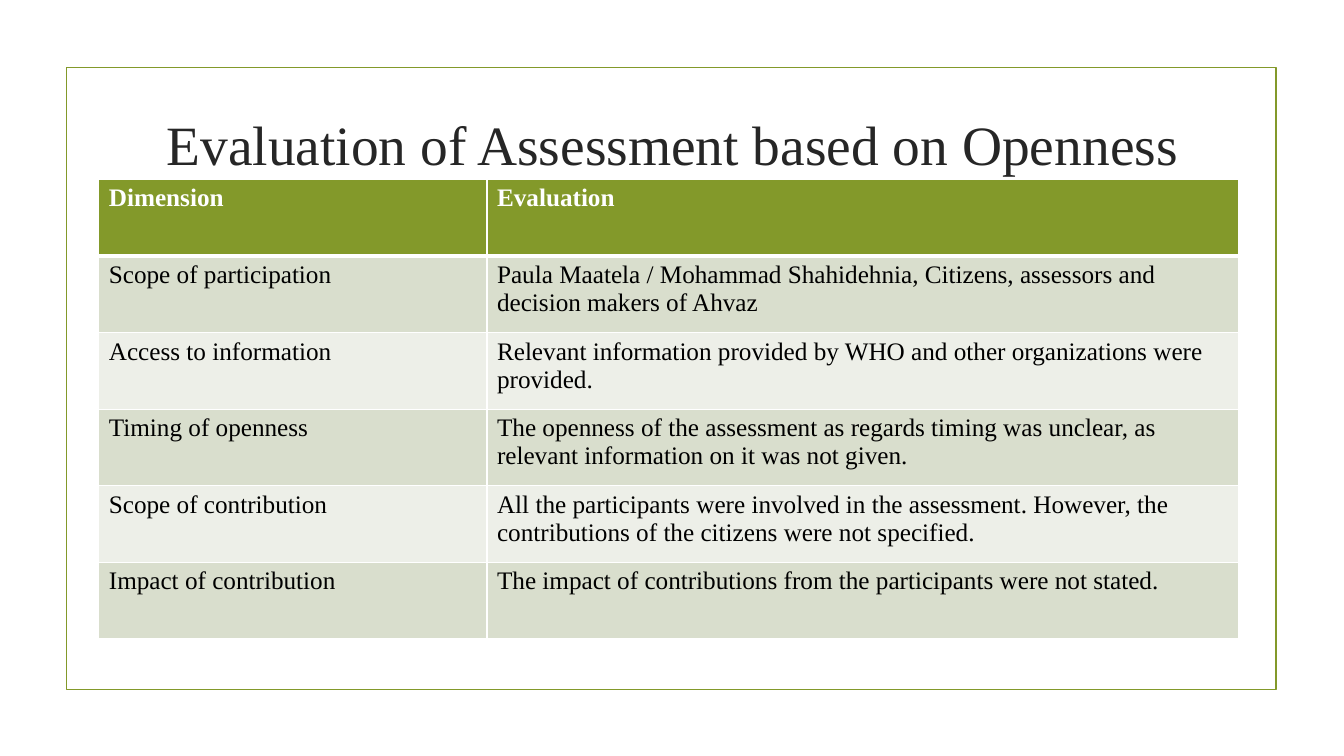
from dataclasses import dataclass

from lxml import etree
from pptx import Presentation
from pptx import util as u
from pptx.dml.color import RGBColor
from pptx.enum import shapes, text
from pptx.oxml import ns


@dataclass(frozen=True)
class Theme:
    """Colours, font and type sizes of the slide."""
    font: str = "Times New Roman"
    green: str = "83992A"
    title_ink: str = "262626"
    body_ink: str = "000000"
    white: str = "FFFFFF"
    bands: tuple = ("D9DECD", "EDEFE8")
    title_size: float = 39.6
    body_size: float = 18
    frame_line: float = 1.25
    grid_line: float = 1
    header_line: float = 3


class SlideBuilder:
    """Draws styled elements on the current slide."""

    def __init__(self, deck, theme):
        """Open a title-only slide."""
        self.theme = theme
        self.slide = deck.slides.add_slide(deck.slide_layouts[5])

    def set_wording(self, text_frame, wording, size, ink, bold=False):
        """Put one formatted paragraph in a text frame."""
        text_frame.text = wording
        font = text_frame.paragraphs[0].font
        formats = {"name": self.theme.font, "size": u.Pt(size), "bold": bold}
        for key, value in formats.items():
            setattr(font, key, value)
        font.color.rgb = RGBColor.from_string(ink)

    def frame(self, left, top, width, height):
        """Draw the outlined border of the slide."""
        border = self.slide.shapes.add_shape(
            shapes.MSO_SHAPE.RECTANGLE, *map(u.Inches, (left, top, width, height)))
        border.shadow.inherit = False
        border.fill.background()
        border.line.color.rgb = RGBColor.from_string(self.theme.green)
        border.line.width = u.Pt(self.theme.frame_line)

    def title(self, wording, left, top, width, height):
        """Place and format the title placeholder."""
        heading = self.slide.shapes.title
        place = {"left": left, "top": top, "width": width, "height": height}
        for key, value in place.items():
            setattr(heading, key, u.Inches(value))
        layout = {"word_wrap": True, "auto_size": text.MSO_AUTO_SIZE.NONE,
                  "vertical_anchor": text.MSO_ANCHOR.MIDDLE}
        for key, value in layout.items():
            setattr(heading.text_frame, key, value)
        self.set_wording(heading.text_frame, wording,
                         self.theme.title_size, self.theme.title_ink)
        heading.text_frame.paragraphs[0].alignment = text.PP_ALIGN.CENTER

    def cell_borders(self, cell, widths):
        """Rule the four sides of a cell in white."""
        properties = cell._tc.get_or_add_tcPr()
        for position, (side, width) in enumerate(widths.items()):
            edge = etree.Element(ns.qn(f"a:ln{side}"), w=str(u.Pt(width)))
            fill = etree.SubElement(edge, ns.qn("a:solidFill"))
            etree.SubElement(fill, ns.qn("a:srgbClr"), val=self.theme.white)
            properties.insert(position, edge)

    def table(self, records, left, top, column_widths, row_height):
        """Add a table with a green header and banded rows."""
        theme = self.theme
        size = (sum(column_widths), row_height * len(records))
        grid = self.slide.shapes.add_table(
            len(records), len(column_widths), *map(u.Inches, (left, top, *size))).table
        for column, width in zip(grid.columns, column_widths):
            column.width = u.Inches(width)
        for row_number, record in enumerate(records):
            grid.rows[row_number].height = u.Inches(row_height)
            header = row_number == 0
            background = theme.green if header else theme.bands[(row_number - 1) % 2]
            widths = dict.fromkeys("LRTB", theme.grid_line)
            if row_number < 2:
                widths["B" if header else "T"] = theme.header_line
            for column_number, wording in enumerate(record):
                cell = grid.cell(row_number, column_number)
                cell.fill.solid()
                cell.fill.fore_color.rgb = RGBColor.from_string(background)
                ink = theme.white if header else theme.body_ink
                self.set_wording(cell.text_frame, wording, theme.body_size, ink, header)
                self.cell_borders(cell, widths)


EVALUATIONS = [
    ("Dimension", "Evaluation"),
    ("Scope of participation",
     "Paula Maatela / Mohammad Shahidehnia, Citizens, assessors and decision makers of Ahvaz"),
    ("Access to information",
     "Relevant information provided by WHO and other organizations were provided."),
    ("Timing of openness",
     "The openness of the assessment as regards timing was unclear, "
     "as relevant information on it was not given."),
    ("Scope of contribution",
     "All the participants were involved in the assessment. "
     "However, the contributions of the citizens were not specified."),
    ("Impact of contribution",
     "The impact of contributions from the participants were not stated."),
]


def main():
    """Build and save the slide."""
    deck = Presentation()
    deck.slide_width, deck.slide_height = u.Inches(13.33), u.Inches(7.5)
    builder = SlideBuilder(deck, Theme())
    builder.frame(0.66, 0.67, 12, 6.17)
    builder.title("Evaluation of Assessment based on Openness", 1.42, 1.07, 10.5, 0.71)
    builder.table(EVALUATIONS, 0.98, 1.78, (3.85, 7.45), 0.76)
    deck.save("out.pptx")


if __name__ == "__main__":
    main()
